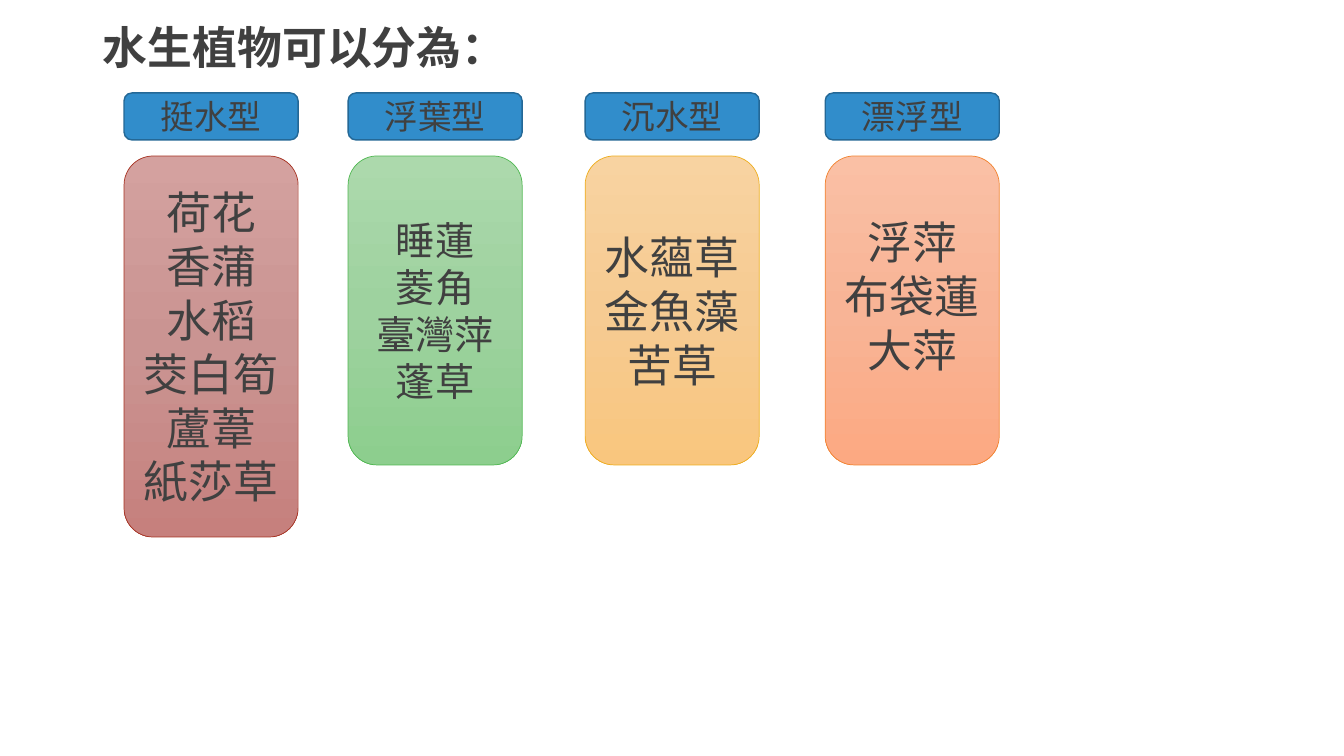
from copy import deepcopy

from pptx import Presentation
from pptx import util as u
from pptx.dml.color import RGBColor
from pptx.enum import shapes, text
from pptx.oxml.ns import qn

COLORS = {"ink": "404040", "header": "318DCB", "header_line": "246896"}
CJK = "Noto Sans CJK SC"
EMU_PER_PX = 914400 / 100.8


def px(length):
    return u.Emu(round(length * EMU_PER_PX))


def write(frame, content, size, font="Arial", ea=None, bold=False, align=None, spacing=None):
    frame.word_wrap = True
    frame.text = content
    for paragraph in frame.paragraphs:
        paragraph.alignment = align
        paragraph.line_spacing = spacing
        for run in paragraph.runs:
            run.font.size = u.Pt(size)
            run.font.name = font
            run.font.bold = bold
            run.font.color.rgb = RGBColor.from_string(COLORS["ink"])
            if ea:
                latin = run.font._element.find(qn("a:latin"))
                east_asian = latin.makeelement(qn("a:ea"), {"typeface": ea})
                latin.addnext(east_asian)


class PlantSlide:
    def __init__(self, presentation):
        self.slide = presentation.slides.add_slide(presentation.slide_layouts[6])

    def title(self, content, left, top, width, height):
        box = self.slide.shapes.add_textbox(*map(px, (left, top, width, height)))
        write(box.text_frame, content, 32, bold=True, spacing=0.9)

    def rounded(self, left, top, width, height, line, weight):
        shape = self.slide.shapes.add_shape(
            shapes.MSO_SHAPE.ROUNDED_RECTANGLE, *map(px, (left, top, width, height)))
        shape.shadow.inherit = False
        shape.line.color.rgb = RGBColor.from_string(line)
        shape.line.width = u.Pt(weight)
        shape.text_frame.vertical_anchor = text.MSO_ANCHOR.MIDDLE
        return shape

    def header(self, content, left, top, width, height):
        header = self.rounded(left, top, width, height, COLORS["header_line"], 1)
        header.fill.solid()
        header.fill.fore_color.rgb = RGBColor.from_string(COLORS["header"])
        write(header.text_frame, content, 24, align=text.PP_ALIGN.CENTER)

    def plants(self, names, left, top, width, height, line, shades, size, raise_by):
        card = self.rounded(left, top, width, height, line, 0.5)
        card.fill.gradient()
        card.fill.gradient_angle = 270
        stops = next(card.element.iter(qn("a:gsLst")))
        stops.insert(1, deepcopy(stops[0]))
        for index, (stop, shade) in enumerate(zip(card.fill.gradient_stops, shades)):
            stop.position = index / 2
            stop.color.rgb = RGBColor.from_string(shade)
        card.text_frame.margin_bottom = px(5 + 2 * raise_by)
        write(card.text_frame, "\n".join(names), size, font=CJK, ea=CJK,
              align=text.PP_ALIGN.CENTER, spacing=u.Pt(round(size * 1.2, 1)))


def main():
    presentation = Presentation()
    presentation.slide_width = u.Inches(13.33)
    presentation.slide_height = u.Inches(7.5)
    slide = PlantSlide(presentation)
    slide.title("水生植物可以分為：", 93, 21, 969, 60)

    plant_types = [
        ("挺水型", ["荷花", "香蒲", "水稻", "茭白筍蘆葦", "紙莎草"],
         124, 381, "A63121", ("D4A19F", "CA9492", "C6807D"), 32, 0),
        ("浮葉型", ["睡蓮", "菱角", "臺灣萍蓬草"],
         348, 309, "50B852", ("ACD9AC", "9ED29F", "8DCE8E"), 28, 0),
        ("沉水型", ["水蘊草", "金魚藻", "苦草"],
         585, 309, "EEAD1D", ("F8D3A1", "F6CB92", "F9C67E"), 32, 0),
        ("漂浮型", ["浮萍", "布袋蓮", "大萍"],
         825, 309, "F28330", ("FAC0A5", "F8B496", "FCA982"), 32, 15),
    ]
    for label, names, left, height, line, shades, size, raise_by in plant_types:
        slide.header(label, left, 93, 174, 47)
        slide.plants(names, left, 156, 174, height, line, shades, size, raise_by)

    presentation.save("out.pptx")


if __name__ == "__main__":
    main()
